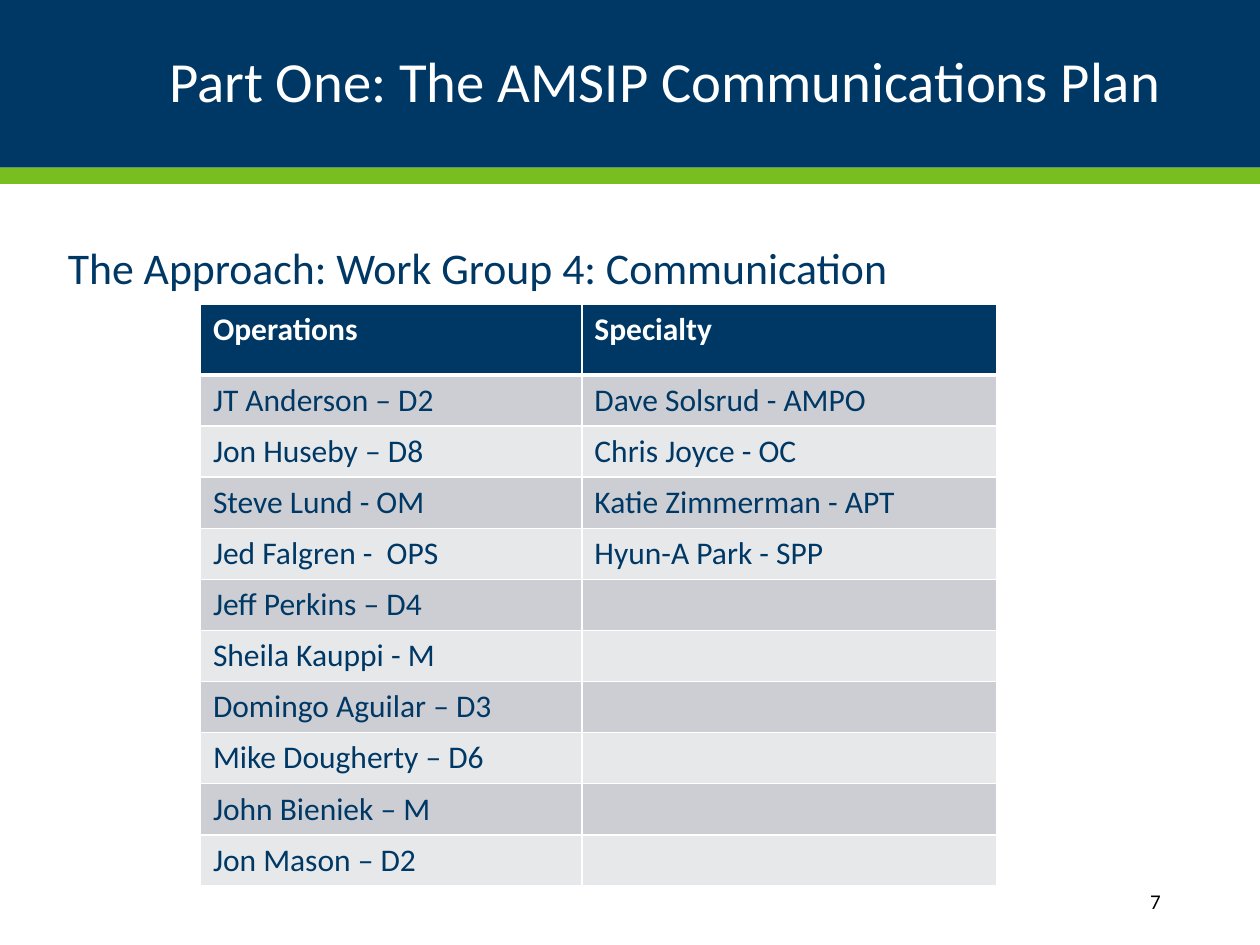
from itertools import zip_longest

from pptx import Presentation
from pptx.dml.color import RGBColor
from pptx.enum.shapes import MSO_SHAPE
from pptx.enum.text import MSO_ANCHOR as Anchor, PP_ALIGN as Align
from pptx.oxml.ns import qn
from pptx.util import Cm, Pt
from lxml.etree import SubElement

COLORS = {
    "navy": "003865",
    "green": "78BE21",
    "white": "FFFFFF",
    "black": "000000",
    "band_dark": "CCCED3",
    "band_light": "E7E8EA",
}
FONT = "Calibri"
SLIDE_WIDTH, SLIDE_HEIGHT = 25.4, 19.05

OPERATIONS = [
    "JT Anderson – D2", "Jon Huseby – D8", "Steve Lund - OM",
    "Jed Falgren -  OPS", "Jeff Perkins – D4", "Sheila Kauppi - M",
    "Domingo Aguilar – D3", "Mike Dougherty – D6", "John Bieniek – M",
    "Jon Mason – D2",
]
SPECIALTY = [
    "Dave Solsrud - AMPO", "Chris Joyce - OC",
    "Katie Zimmerman - APT", "Hyun-A Park - SPP",
]


def rgb(color):
    return RGBColor.from_string(COLORS[color])


def style_paragraph(paragraph, size, color, bold=False):
    font = paragraph.font
    font.name, font.size, font.bold = FONT, Pt(size), bold
    font.color.rgb = rgb(color)


def add_bar(slide, left, top, width, height, color):
    shape = slide.shapes.add_shape(
        MSO_SHAPE.RECTANGLE, Cm(left), Cm(top), Cm(width), Cm(height))
    shape.shadow.inherit = False
    shape.fill.solid()
    shape.fill.fore_color.rgb = rgb(color)
    shape.line.fill.background()


def add_text(slide, left, top, width, height, text, size, color,
             align=Align.LEFT, anchor=Anchor.MIDDLE):
    box = slide.shapes.add_textbox(Cm(left), Cm(top), Cm(width), Cm(height))
    frame = box.text_frame
    frame.word_wrap = True
    frame.vertical_anchor = anchor
    paragraph = frame.paragraphs[0]
    paragraph.text = text
    paragraph.alignment = align
    style_paragraph(paragraph, size, color)
    return paragraph


def add_header(slide, left, top, width, height):
    """Navy band with a green stripe along its foot and the title inside."""
    stripe = 0.33
    band = height - stripe
    add_bar(slide, left, top, width, band, "navy")
    add_bar(slide, left, top + band, width, stripe, "green")
    margin = 1.75
    title = add_text(slide, left + margin, top + 0.43, width - 2 * margin, 2.54,
                     "Part One: The AMSIP Communications Plan",
                     32.4, "white", Align.RIGHT)
    title.line_spacing = 0.9


def add_subtitle(slide, left, top, width, height):
    paragraph = add_text(slide, left, top, width, height,
                         "The Approach: Work Group 4: Communication",
                         25, "navy", anchor=Anchor.TOP)
    paragraph.space_before = paragraph.space_after = Pt(10)


def set_borders(cell, bottom_width):
    properties = cell._tc.get_or_add_tcPr()
    widths = {"lnL": 1, "lnR": 1, "lnT": 1, "lnB": bottom_width}
    for side, width in widths.items():
        line = SubElement(properties, qn(f"a:{side}"), w=str(Pt(width)))
        fill = SubElement(line, qn("a:solidFill"))
        SubElement(fill, qn("a:srgbClr"), val=COLORS["white"])


def add_members_table(slide, left, top, width, height):
    """Two columns of members under a navy heading row, in banded rows."""
    rows = [("Operations", "Specialty"),
            *zip_longest(OPERATIONS, SPECIALTY, fillvalue="")]
    table = slide.shapes.add_table(
        len(rows), 2, Cm(left), Cm(top), Cm(width), Cm(height)).table

    first_width, body_height = 7.69, 1.03
    table.columns[0].width = Cm(first_width)
    table.columns[1].width = Cm(width - first_width)
    heading_height = height - body_height * (len(rows) - 1)

    for index, values in enumerate(rows):
        heading = index == 0
        band = "band_dark" if index % 2 else "band_light"
        table.rows[index].height = Cm(heading_height if heading else body_height)
        for cell, value in zip(table.rows[index].cells, values):
            cell.text = value
            style_paragraph(cell.text_frame.paragraphs[0], 18,
                            "white" if heading else "navy", heading)
            set_borders(cell, 3 if heading else 1)
            cell.fill.solid()
            cell.fill.fore_color.rgb = rgb("navy" if heading else band)


def add_page_number(slide, left, top, width, height):
    add_text(slide, left, top, width, height, "7", 12, "black", Align.RIGHT)


def main():
    presentation = Presentation()
    presentation.slide_width = Cm(SLIDE_WIDTH)
    presentation.slide_height = Cm(SLIDE_HEIGHT)
    slide = presentation.slides.add_slide(presentation.slide_layouts[6])

    add_header(slide, 0, 0, SLIDE_WIDTH, 3.71)
    add_page_number(slide, 20.6, 17.65, 3.05, 1.02)
    add_subtitle(slide, 1.12, 4.72, 21.9, 12.1)
    add_members_table(slide, 4.04, 6.13, 16.05, 11.73)

    presentation.save("out.pptx")


if __name__ == "__main__":
    main()
